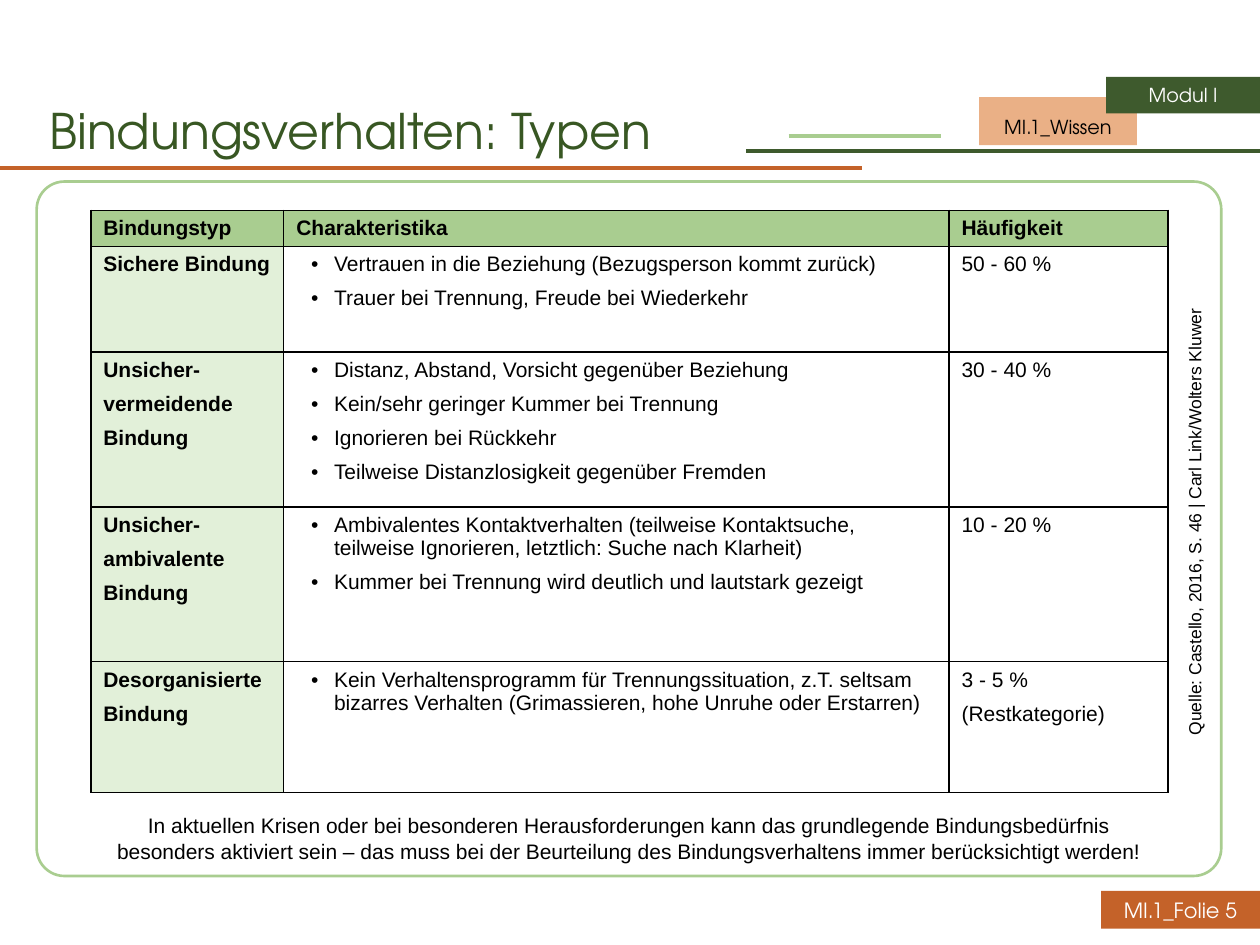
"""Build the slide on types of attachment behaviour."""
from lxml import etree
from pptx import Presentation
from pptx.dml.color import RGBColor
from pptx.enum.shapes import MSO_CONNECTOR, MSO_SHAPE
from pptx.enum.text import MSO_ANCHOR, MSO_AUTO_SIZE, PP_ALIGN
from pptx.oxml import parse_xml
from pptx.oxml.ns import nsdecls, qn
from pptx.util import Cm, Pt

RECT, ROUND = MSO_SHAPE.RECTANGLE, MSO_SHAPE.ROUNDED_RECTANGLE
STRAIGHT = MSO_CONNECTOR.STRAIGHT
LEFT, CENTER = PP_ALIGN.LEFT, PP_ALIGN.CENTER
TOP, MIDDLE = MSO_ANCHOR.TOP, MSO_ANCHOR.MIDDLE
NO_FIT = MSO_AUTO_SIZE.NONE

DARK, LIGHT, PALE = "3E5A2D", "A9CD90", "E2F0D9"
ORANGE, PEACH = "C46229", "EAB086"
BLACK, WHITE = "000000", "FFFFFF"
HEADING, BODY = "TeX Gyre Adventor", "Arial"

HEADER = ["Bindungstyp", "Charakteristika", "Häufigkeit"]
TYPES = [
    (["Sichere Bindung"],
     ["Vertrauen in die Beziehung (Bezugsperson kommt zurück)",
      "Trauer bei Trennung, Freude bei Wiederkehr"],
     ["50 - 60 %"]),
    (["Unsicher-", "vermeidende", "Bindung"],
     ["Distanz, Abstand, Vorsicht gegenüber Beziehung",
      "Kein/sehr geringer Kummer bei Trennung",
      "Ignorieren bei Rückkehr",
      "Teilweise Distanzlosigkeit gegenüber Fremden"],
     ["30 - 40 %"]),
    (["Unsicher-", "ambivalente", "Bindung"],
     ["Ambivalentes Kontaktverhalten (teilweise Kontaktsuche, "
      "teilweise Ignorieren, letztlich: Suche nach Klarheit)",
      "Kummer bei Trennung wird deutlich und lautstark gezeigt"],
     ["10 - 20 %"]),
    (["Desorganisierte", "Bindung"],
     ["Kein Verhaltensprogramm für Trennungssituation, z.T. seltsam "
      "bizarres Verhalten (Grimassieren, hohe Unruhe oder Erstarren)"],
     ["3 - 5 %", "(Restkategorie)"]),
]
COLUMNS = [3.89, 13.41, 4.42]
ROWS = [0.73, 2.13, 3.12, 3.12, 2.64]


def rgb(value):
    return RGBColor.from_string(value)


class Deck:
    """Hold the text style and the current slide."""

    def __init__(self, prs):
        self.slide = prs.slides.add_slide(prs.slide_layouts[5])
        self.style = {"name": BODY, "size": Pt(12), "bold": False}

    def add_text(self, p, text, color=BLACK, **font):
        r = p.add_run()
        r.text = text
        for key, value in {**self.style, **font}.items():
            setattr(r.font, key, value)
        r.font.color.rgb = rgb(color)

    def title(self, text, box):
        sp = self.slide.shapes.title
        sp.left, sp.top, sp.width, sp.height = map(Cm, box)
        tf = sp.text_frame
        for key, value in {"vertical_anchor": TOP, "auto_size": NO_FIT,
                           "word_wrap": True}.items():
            setattr(tf, key, value)
        p = tf.paragraphs[0]
        p.alignment, p.line_spacing = LEFT, 0.9
        self.add_text(p, text, "385723", name=HEADING, size=Pt(28))

    def shape(self, kind, box, fill=None, line=None):
        sp = self.slide.shapes.add_shape(kind, *map(Cm, box))
        sp.shadow.inherit = False
        if fill:
            sp.fill.solid()
            sp.fill.fore_color.rgb = rgb(fill)
        else:
            sp.fill.background()
        if line:
            sp.line.color.rgb = rgb(line)
            sp.line.width = Pt(1.5)
        else:
            sp.line.fill.background()
        return sp

    def label(self, text, box, fill, color=BLACK, align=CENTER, spacing=None, **font):
        sp = self.shape(RECT, box, fill)
        tf = sp.text_frame
        tf.word_wrap, tf.vertical_anchor = True, MIDDLE
        p = tf.paragraphs[0]
        p.alignment, p.line_spacing = align, spacing
        self.add_text(p, text, color, **font)
        return sp

    def rule(self, x1, x2, y, color):
        ln = self.slide.shapes.add_connector(STRAIGHT, Cm(x1), Cm(y), Cm(x2), Cm(y))
        ln.line.color.rgb = rgb(color)
        ln.line.width = Pt(2.25)
        etree.SubElement(ln._element.spPr, qn("a:effectLst"))

    def cell(self, cell, lines, fill=None, bold=False, bullets=False):
        tcPr = cell._tc.get_or_add_tcPr()
        for side in "LRTB":
            tcPr.append(parse_xml(
                f'<a:ln{side} {nsdecls("a")} w="12700"><a:solidFill>'
                f'<a:srgbClr val="{BLACK}"/></a:solidFill></a:ln{side}>'))
        if fill:
            cell.fill.solid()
            cell.fill.fore_color.rgb = rgb(fill)
        else:
            cell.fill.background()
        tf = cell.text_frame
        for i, text in enumerate(lines):
            p = tf.add_paragraph() if i else tf.paragraphs[0]
            if bullets:
                pPr = p._p.get_or_add_pPr()
                pPr.set("marL", str(Cm(0.76)))
                pPr.set("indent", str(Cm(-0.46)))
                etree.SubElement(pPr, qn("a:buFont")).set("typeface", BODY)
                etree.SubElement(pPr, qn("a:buChar")).set("char", "•")
            p.space_before, p.space_after = Pt(3 if i else 0), Pt(3)
            self.add_text(p, text, bold=bold)

    def table(self, x, y):
        size = Cm(sum(COLUMNS)), Cm(sum(ROWS))
        frame = self.slide.shapes.add_table(len(ROWS), len(COLUMNS), Cm(x), Cm(y), *size)
        tbl = frame.table
        tbl.first_row = tbl.horz_banding = False
        for column, width in zip(tbl.columns, COLUMNS):
            column.width = Cm(width)
        for row, height in zip(tbl.rows, ROWS):
            row.height = Cm(height)
        for c, text in enumerate(HEADER):
            self.cell(tbl.cell(0, c), [text], LIGHT, bold=True)
        for r, (kind, traits, share) in enumerate(TYPES, 1):
            self.cell(tbl.cell(r, 0), kind, PALE, bold=True)
            self.cell(tbl.cell(r, 1), traits, bullets=True)
            self.cell(tbl.cell(r, 2), share)


def main():
    prs = Presentation()
    prs.slide_width, prs.slide_height = Cm(25.4), Cm(19.05)
    deck = Deck(prs)
    tag = {"name": HEADING, "size": Pt(11)}
    deck.label("MI.1_Wissen", (19.74, 1.96, 3.18, 0.97), PEACH, spacing=1.5, **tag)
    deck.rule(0, 17.37, 3.38, ORANGE)
    deck.rule(15.04, 25.4, 3.05, DARK)
    deck.rule(15.9, 18.97, 2.74, LIGHT)
    panel = deck.shape(ROUND, (0.74, 3.66, 23.88, 14), line=LIGHT)
    panel.adjustments[0] = 0.04
    deck.label("MI.1_Folie 5", (22.2, 17.96, 3.2, 0.76), ORANGE, WHITE, name=HEADING)
    deck.label("Modul I", (22.3, 1.55, 3.1, 0.74), DARK, WHITE, **tag)
    deck.title("Bindungsverhalten: Typen", (0.74, 2.03, 21.89, 3.68))
    deck.table(1.83, 4.24)
    deck.label("In aktuellen Krisen oder bei besonderen Herausforderungen kann das "
               "grundlegende Bindungsbedürfnis besonders aktiviert sein – das muss bei der "
               "Beurteilung des Bindungsverhaltens immer berücksichtigt werden!",
               (1.83, 16.26, 21.72, 1.27), WHITE)
    source = deck.label("Quelle: Castello, 2016, S. 46 | Carl Link/Wolters Kluwer",
                        (19.15, 9.8, 9.86, 0.69), WHITE, align=LEFT, size=Pt(10))
    source.rotation = 270
    prs.save("out.pptx")


if __name__ == "__main__":
    main()
